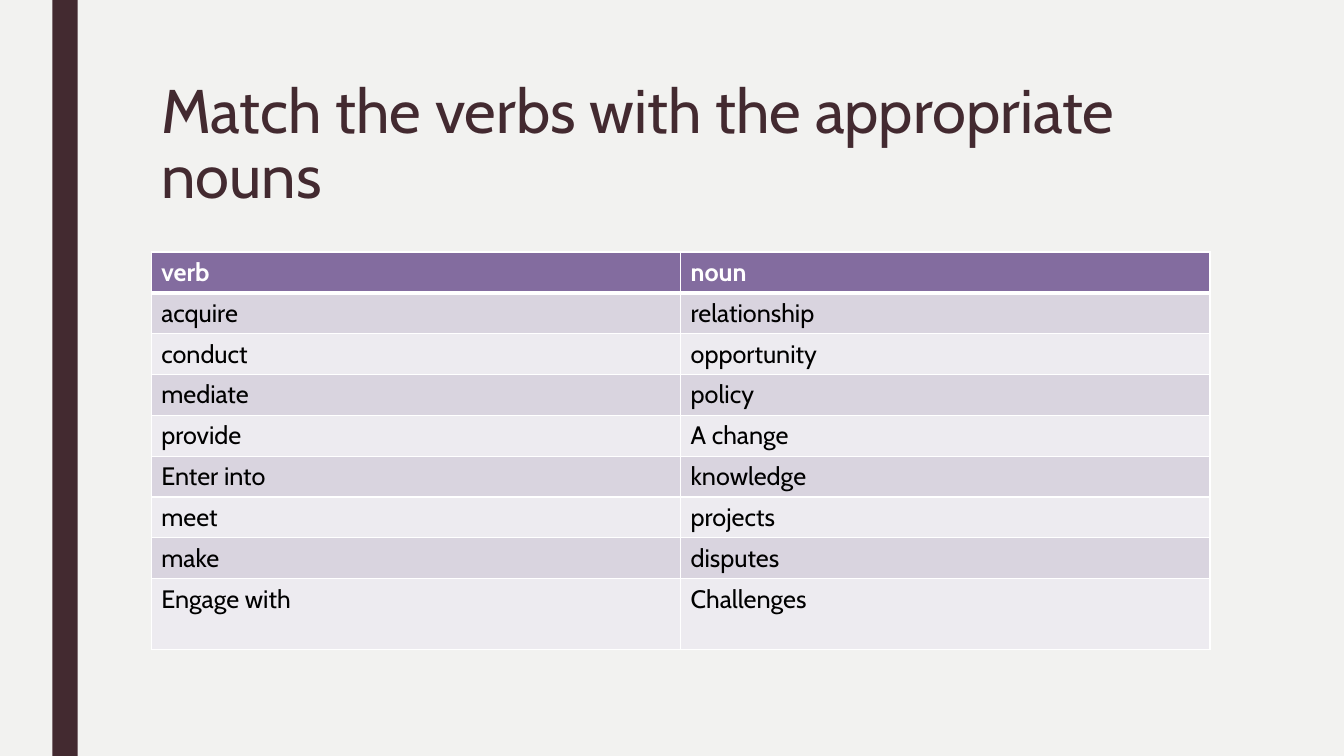
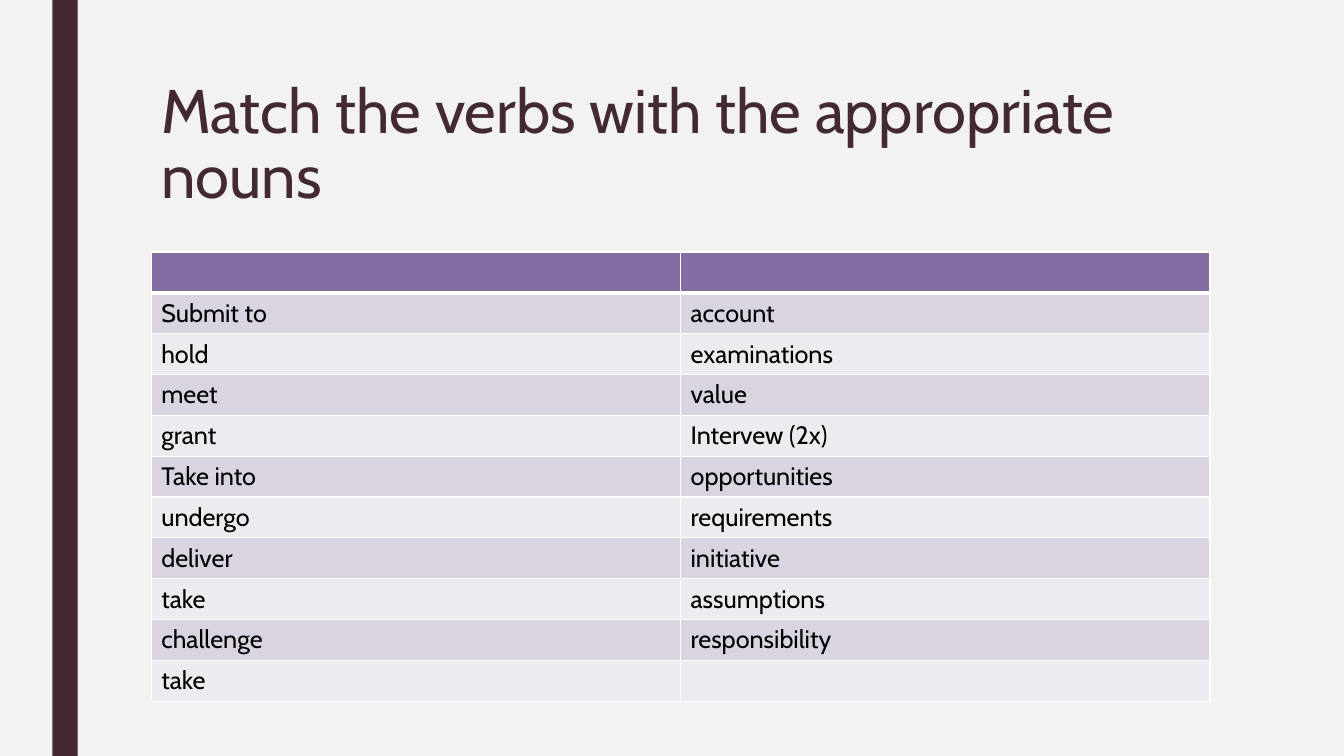
from lxml import etree
from pptx import Presentation
from pptx.dml.color import RGBColor
from pptx.enum.shapes import MSO_SHAPE
from pptx.enum.text import MSO_ANCHOR
from pptx.oxml.ns import qn
from pptx.util import Inches, Pt

RECT = MSO_SHAPE.RECTANGLE
TOP = MSO_ANCHOR.TOP

PAPER = RGBColor(0xF2, 0xF2, 0xF0)
MAROON = RGBColor(0x43, 0x2A, 0x30)
PURPLE = RGBColor(0x83, 0x6C, 0x9F)
BAND_DARK = RGBColor(0xD9, 0xD4, 0xDF)
BAND_LIGHT = RGBColor(0xED, 0xEB, 0xF0)
WHITE = RGBColor(0xFF, 0xFF, 0xFF)
BLACK = RGBColor(0, 0, 0)

FONT = "Cabin"
TITLE = "Match the verbs with the appropriate nouns"

# Grid: quarter-inch units; eleven table rows fill 4.46 inches
UNIT = Inches(0.25)
LEFT, WIDTH = 6 * UNIT, 42 * UNIT
ROW = Inches(4.46) // 11
TALL_ROW = Inches(0.7)

# One entry per slide: rows of the table and the height of its last row
TABLES = [
    ([("verb", "noun"),
      ("acquire", "relationship"),
      ("conduct", "opportunity"),
      ("mediate", "policy"),
      ("provide", "A change"),
      ("Enter into", "knowledge"),
      ("meet", "projects"),
      ("make", "disputes"),
      ("Engage with", "Challenges")], TALL_ROW),
    ([("", ""),
      ("Submit to", "account"),
      ("hold", "examinations"),
      ("meet", "value"),
      ("grant", "Intervew (2x)"),
      ("Take into", "opportunities"),
      ("undergo", "requirements"),
      ("deliver", "initiative"),
      ("take", "assumptions"),
      ("challenge", "responsibility"),
      ("take", "")], ROW),
]


def style_text(p, size, color, bold=False):
    for r in p.runs:
        r.font.name = FONT
        r.font.size = Pt(size)
        r.font.bold = bold
        r.font.color.rgb = color


def add_border(cell, side, width):
    tcPr = cell._tc.get_or_add_tcPr()
    ln = etree.SubElement(tcPr, qn(f"a:ln{side}"), w=str(Pt(width)))
    fill = etree.SubElement(ln, qn("a:solidFill"))
    etree.SubElement(fill, qn("a:srgbClr"), val=str(WHITE))


prs = Presentation()
prs.slide_width, prs.slide_height = Inches(13.33), Inches(7.5)

# Shared background
bg = prs.slide_master.background.fill
bg.solid()
bg.fore_color.rgb = PAPER

for rows, last_height in TABLES:
    s = prs.slides.add_slide(prs.slide_layouts[6])

    # Side band
    sp = s.shapes.add_shape(RECT, Inches(0.52), 0, UNIT, prs.slide_height)
    sp.shadow.inherit = False
    sp.fill.solid()
    sp.fill.fore_color.rgb = MAROON
    sp.line.fill.background()

    # Title
    tf = s.shapes.add_textbox(LEFT, 3 * UNIT, WIDTH, Inches(1.62)).text_frame
    tf.word_wrap = True
    tf.vertical_anchor = TOP
    tf.text = TITLE
    tf.paragraphs[0].line_spacing = 0.89
    style_text(tf.paragraphs[0], 44, MAROON)

    # Table
    height = ROW * (len(rows) - 1) + last_height
    table = s.shapes.add_table(len(rows), 2, LEFT, 10 * UNIT, WIDTH, height).table
    for row in table.rows:
        row.height = ROW
    table.rows[len(rows) - 1].height = last_height

    for i, words in enumerate(rows):
        header = i == 0
        band = PURPLE if header else BAND_DARK if i % 2 else BAND_LIGHT
        # A thick rule parts the header from the first row
        widths = {"L": 1, "R": 1, "T": 3 if i == 1 else 1, "B": 3 if header else 1}
        for j, word in enumerate(words):
            cell = table.cell(i, j)
            for side, width in widths.items():
                add_border(cell, side, width)
            cell.fill.solid()
            cell.fill.fore_color.rgb = band
            if word:
                cell.text_frame.text = word
                style_text(cell.text_frame.paragraphs[0], 18,
                           WHITE if header else BLACK, header)

prs.save("out.pptx")
